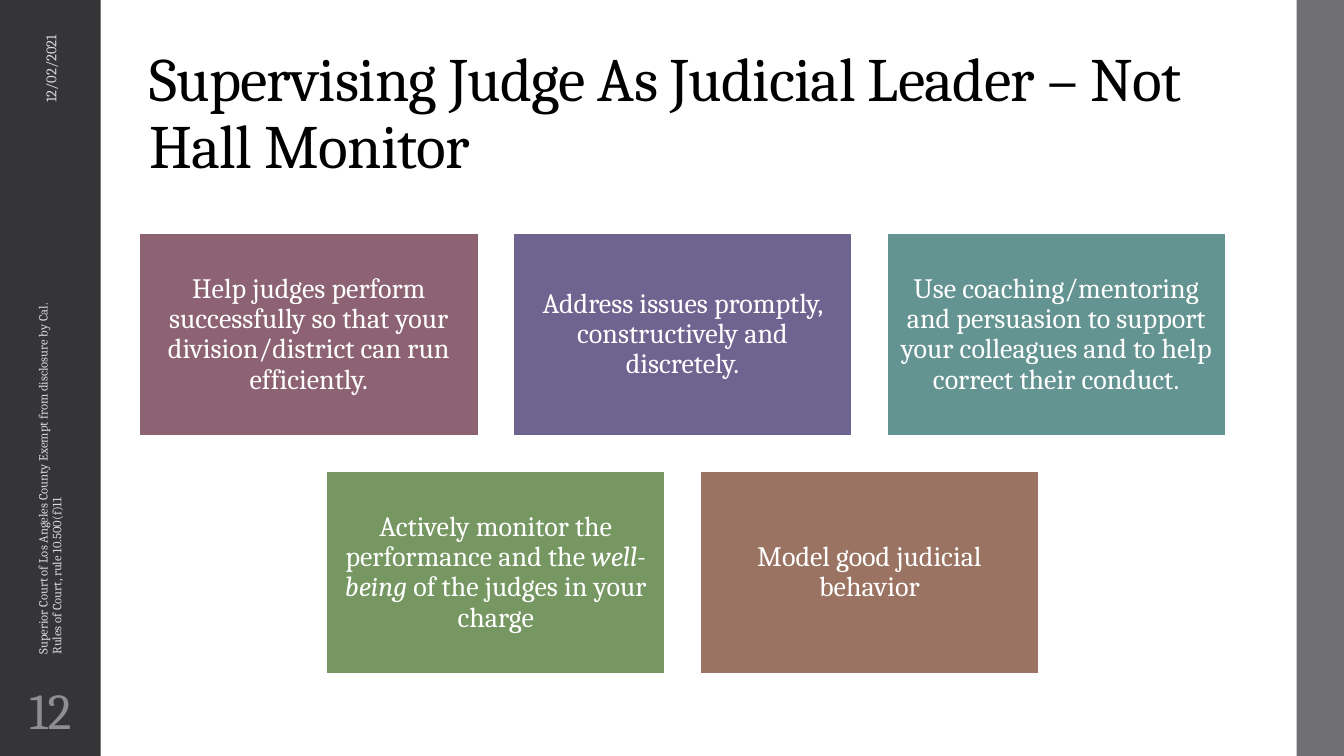
from collections import namedtuple
from dataclasses import dataclass

from pptx import Presentation
from pptx.dml.color import RGBColor
from pptx.enum.shapes import MSO_SHAPE
from pptx.enum.text import MSO_ANCHOR, PP_ALIGN
from pptx.util import Inches, Pt

RECTANGLE = MSO_SHAPE.RECTANGLE
MIDDLE, BOTTOM = MSO_ANCHOR.MIDDLE, MSO_ANCHOR.BOTTOM
LEFT, CENTER, RIGHT = PP_ALIGN.LEFT, PP_ALIGN.CENTER, PP_ALIGN.RIGHT

Box = namedtuple("Box", "left top width height")


@dataclass(frozen=True)
class Theme:
    font: str = "Cambria"
    title_color: str = "000000"
    white: str = "FFFFFF"
    sidebar: str = "353537"
    edge: str = "6F6F74"
    sidebar_text: str = "D9D9DB"
    number: str = "8E8E94"
    cards: tuple = ("8D6374", "6F6390", "639491", "769762", "9B7362")
    title_size: float = 44
    card_size: float = 20
    number_size: float = 36
    date_size: float = 10.5
    notice_size: float = 9


THEME = Theme()
SLIDE = Box(0, 0, 13.33, 7.5)
SIDEBAR = Box(0, 0, 1, SLIDE.height)
EDGE = Box(12.86, 0, SLIDE.width - 12.86, SLIDE.height)
TITLE = Box(1.38, 0.4, 10.78, 1.45)
CARDS = Box(TITLE.left, 2.31, TITLE.width, 4.38)
COLUMNS = 3
CARD_GAP = 0.34

# Each card is a list of (text, italic) runs.
DUTIES = [
    [("Help judges perform successfully so that your division/district "
      "can run efficiently.", False)],
    [("Address issues promptly, constructively and discretely.", False)],
    [("Use coaching/mentoring and persuasion to support your colleagues "
      "and to help correct their conduct.", False)],
    [("Actively monitor the performance and the ", False),
     ("well-being", True),
     (" of the judges in your charge", False)],
    [("Model good judicial behavior", False)],
]


def inches(box):
    return [Inches(length) for length in box]


def write(shape, runs, size, color, align=LEFT, anchor=MIDDLE,
          line_spacing=1.0, margins=(0.1, 0.05), tracking=None):
    """Fill a shape with one paragraph of (text, italic) runs."""
    frame = shape.text_frame
    frame.word_wrap = True
    frame.vertical_anchor = anchor
    frame.margin_left = frame.margin_right = Inches(margins[0])
    frame.margin_top = frame.margin_bottom = Inches(margins[1])
    paragraph = frame.paragraphs[0]
    paragraph.alignment = align
    paragraph.line_spacing = line_spacing
    for text, italic in runs:
        run = paragraph.add_run()
        run.text = text
        run.font.name = THEME.font
        run.font.size = Pt(size)
        run.font.italic = italic
        run.font.color.rgb = RGBColor.from_string(color)
        if tracking is not None:
            run.font._element.set("spc", str(round(tracking * 100)))


def add_label(slide, box, text, size, color, rotation=0, **style):
    label = slide.shapes.add_textbox(*inches(box))
    label.rotation = rotation
    write(label, [(text, False)], size, color, **style)


def add_panel(slide, box, fill, outline=None):
    panel = slide.shapes.add_shape(RECTANGLE, *inches(box))
    panel.shadow.inherit = False
    panel.fill.solid()
    panel.fill.fore_color.rgb = RGBColor.from_string(fill)
    if outline:
        panel.line.color.rgb = RGBColor.from_string(outline)
        panel.line.width = Pt(1.35)
    else:
        panel.line.fill.background()
    return panel


def upright(box, center_y, length, thickness=0.4):
    """Box that, turned by 270 degrees, runs up the middle of the given box."""
    return Box(box.left + (box.width - length) / 2,
               center_y - thickness / 2, length, thickness)


def add_sidebar(slide, box):
    add_panel(slide, box, THEME.sidebar)
    add_label(slide, upright(box, box.top + 1.29, 2.08), "12/02/2021",
              THEME.date_size, THEME.sidebar_text, rotation=270, align=RIGHT)
    add_label(slide, upright(box, box.top + 4.63, 3.92),
              "Superior Court of Los Angeles County Exempt from disclosure "
              "by Cal. Rules of Court, rule 10.500(f)11",
              THEME.notice_size, THEME.sidebar_text, rotation=270,
              line_spacing=0.9)
    add_label(slide, Box(box.left, box.top + box.height - 0.75, box.width, 0.65),
              "12", THEME.number_size, THEME.number, align=CENTER,
              line_spacing=0.9, margins=(0.05, 0.05))


def add_cards(slide, box):
    """Lay the duties out in rows, with a short last row centred."""
    rows = -(-len(DUTIES) // COLUMNS)
    width = (box.width - CARD_GAP * (COLUMNS - 1)) / COLUMNS
    height = (box.height - CARD_GAP * (rows - 1)) / rows
    for index, (runs, fill) in enumerate(zip(DUTIES, THEME.cards)):
        row, column = divmod(index, COLUMNS)
        in_row = min(COLUMNS, len(DUTIES) - row * COLUMNS)
        indent = (COLUMNS - in_row) * (width + CARD_GAP) / 2
        card = add_panel(
            slide,
            Box(box.left + indent + column * (width + CARD_GAP),
                box.top + row * (height + CARD_GAP), width, height),
            fill, outline=THEME.white)
        write(card, runs, THEME.card_size, THEME.white, align=CENTER,
              line_spacing=0.9, margins=(0.08, 0.08))


def main():
    deck = Presentation()
    deck.slide_width, deck.slide_height = Inches(SLIDE.width), Inches(SLIDE.height)
    slide = deck.slides.add_slide(deck.slide_layouts[6])
    add_label(slide, TITLE,
              "Supervising Judge As Judicial Leader – Not Hall Monitor",
              THEME.title_size, THEME.title_color, anchor=BOTTOM,
              line_spacing=0.9, tracking=-0.5)
    add_sidebar(slide, SIDEBAR)
    add_panel(slide, EDGE, THEME.edge)
    add_cards(slide, CARDS)
    deck.save("out.pptx")


if __name__ == "__main__":
    main()
